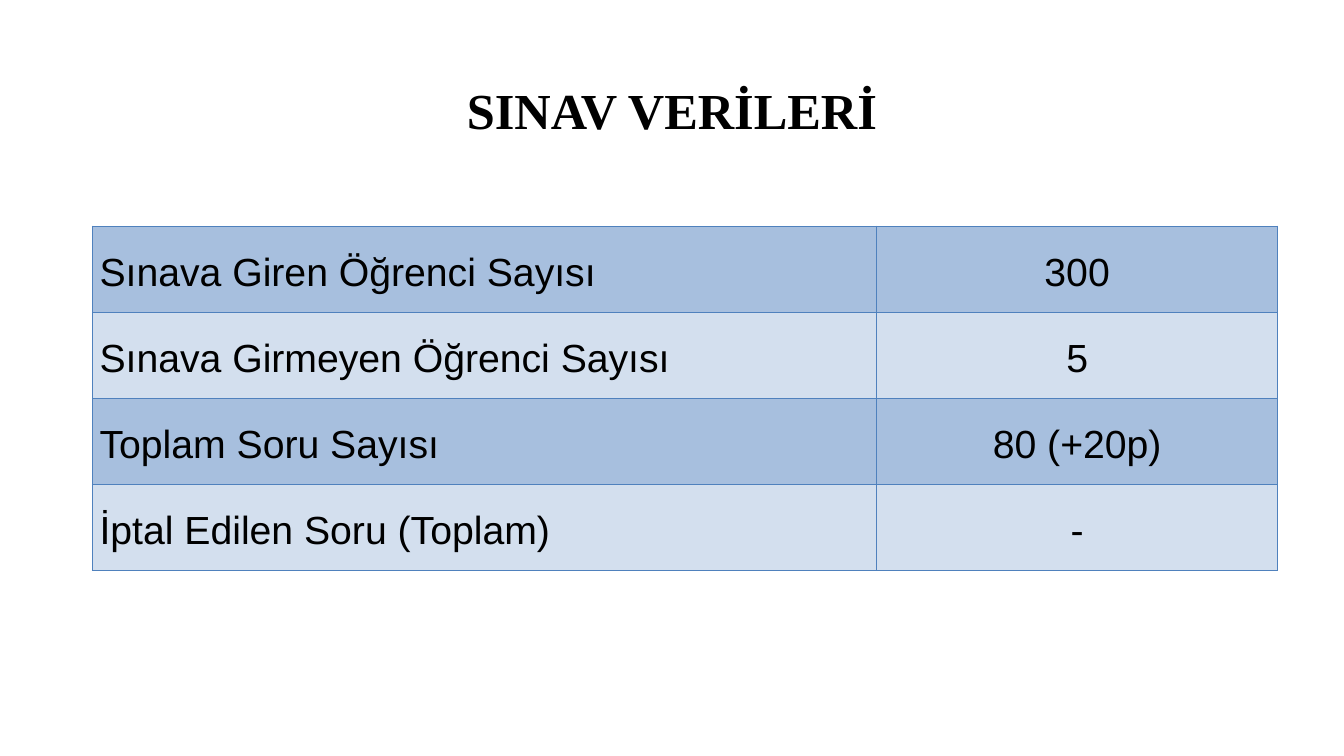
from lxml.etree import SubElement
from pptx import Presentation
from pptx.dml.color import RGBColor
from pptx.enum.text import MSO_ANCHOR as Anchor, PP_ALIGN as Align
from pptx.oxml.ns import qn
from pptx.util import Cm, Pt

BLACK, BORDER = "000000", "4F81BD"
BANDS = ["A7BFDE", "D3DFEE"]
TITLE_FORMAT = {"name": "Times New Roman", "size": Pt(36), "bold": True}
CELL_FORMAT = {"name": "Arial", "size": Pt(28), "bold": False}
EXAM_DATA = [
    ("Sınava Giren Öğrenci Sayısı", "300"),
    ("Sınava Girmeyen Öğrenci Sayısı", "5"),
    ("Toplam Soru Sayısı", "80 (+20p)"),
    ("İptal Edilen Soru (Toplam)", "-"),
]


def color(hex_value):
    return RGBColor.from_string(hex_value)


def write(frame, text, align, spacing, font_format):
    para = frame.paragraphs[0]
    para.alignment, para.line_spacing = align, spacing
    span = para.add_run()
    span.text = text
    for name, value in font_format.items():
        setattr(span.font, name, value)
    span.font.color.rgb = color(BLACK)


def add_borders(cell):
    properties = cell._tc.get_or_add_tcPr()
    for side in ("a:lnL", "a:lnR", "a:lnT", "a:lnB"):
        line = SubElement(properties, qn(side), w=str(Pt(1)))
        fill = SubElement(line, qn("a:solidFill"))
        SubElement(fill, qn("a:srgbClr"), val=BORDER)


def add_title(page, left, top, width, height):
    box = page.shapes.add_textbox(left, top, width, height)
    frame = box.text_frame
    frame.word_wrap = True
    frame.vertical_anchor = Anchor.MIDDLE
    write(frame, "SINAV VERİLERİ", Align.CENTER, 0.9, TITLE_FORMAT)


def add_exam_table(page, left, top, width, height):
    table = page.shapes.add_table(len(EXAM_DATA), 2, left, top, width, height).table
    table.first_row = table.horz_banding = False
    label_width = Cm(19.76)
    table.columns[0].width = label_width
    table.columns[1].width = width - label_width
    cell_format = {
        "margin_left": Cm(0.18), "margin_right": Cm(0.18),
        "margin_top": 0, "margin_bottom": 0,
        "vertical_anchor": Anchor.MIDDLE,
    }
    for row, texts in enumerate(EXAM_DATA):
        for column, (text, align) in enumerate(zip(texts, (Align.LEFT, Align.CENTER))):
            cell = table.cell(row, column)
            for name, value in cell_format.items():
                setattr(cell, name, value)
            add_borders(cell)
            cell.fill.solid()
            cell.fill.fore_color.rgb = color(BANDS[row % 2])
            write(cell.text_frame, text, align, 1.15, CELL_FORMAT)


def main():
    deck = Presentation()
    deck.slide_width, deck.slide_height = Cm(33.87), Cm(19.05)
    page = deck.slides.add_slide(deck.slide_layouts[6])
    add_title(page, Cm(2.33), Cm(1.02), Cm(29.21), Cm(3.68))
    add_exam_table(page, Cm(2.33), Cm(5.7), Cm(29.87), Cm(8.67))
    deck.save("out.pptx")


if __name__ == "__main__":
    main()
